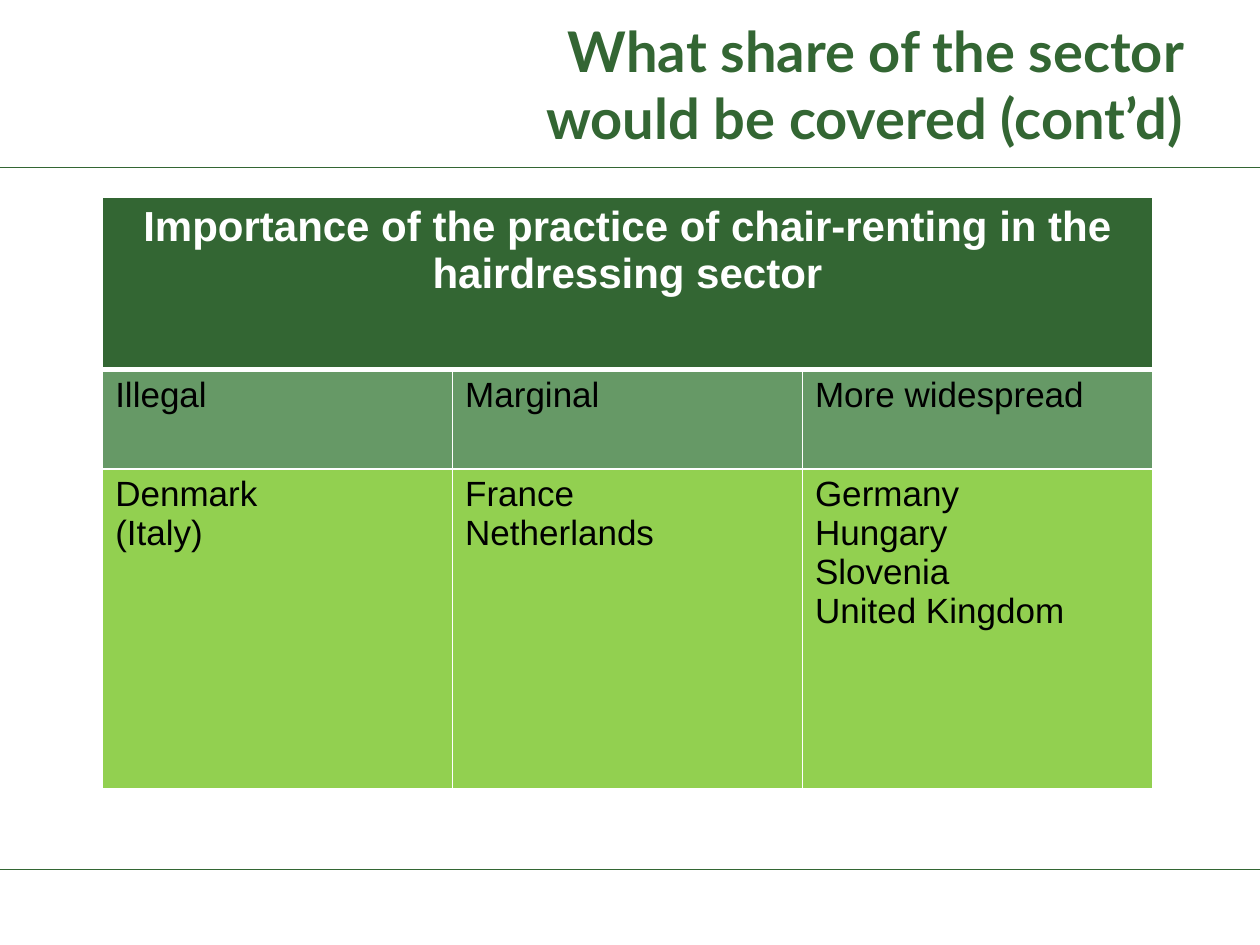
from lxml import etree
from pptx import Presentation
from pptx.dml.color import RGBColor
from pptx.enum.shapes import MSO_CONNECTOR
from pptx.enum.text import MSO_ANCHOR, MSO_AUTO_SIZE, PP_ALIGN
from pptx.oxml.ns import qn
from pptx.util import Cm, Pt

LINE = MSO_CONNECTOR.STRAIGHT
MIDDLE = MSO_ANCHOR.MIDDLE
FIXED = MSO_AUTO_SIZE.NONE
LEFT, CENTER, RIGHT = PP_ALIGN.LEFT, PP_ALIGN.CENTER, PP_ALIGN.RIGHT

COLORS = {
    "dark": "336633",
    "mid": "669966",
    "lime": "92D050",
    "white": "FFFFFF",
    "black": "000000",
}
WIDTH, HEIGHT = 25.4, 19.05


class Deck:
    def __init__(self):
        self.prs = Presentation()
        self.prs.slide_width, self.prs.slide_height = Cm(WIDTH), Cm(HEIGHT)
        self.slide = self.prs.slides.add_slide(self.prs.slide_layouts[5])

    def color(self, name):
        return RGBColor.from_string(COLORS[name])

    def style(self, frame, font, size, color, bold, align):
        for par in frame.paragraphs:
            par.alignment = align
            for run in par.runs:
                run.font.name = font
                run.font.size = Pt(size)
                run.font.bold = bold
                run.font.color.rgb = self.color(color)

    def title(self, text, left, top, width, height):
        box = self.slide.shapes.title
        box.left, box.top = Cm(left), Cm(top)
        box.width, box.height = Cm(width), Cm(height)
        frame = box.text_frame
        frame.text = text
        frame.word_wrap = True
        frame.auto_size = FIXED
        frame.vertical_anchor = MIDDLE
        self.style(frame, "Lato", 32, "dark", True, RIGHT)

    def rule(self, top):
        line = self.slide.shapes.add_connector(
            LINE, Cm(0), Cm(top), Cm(WIDTH), Cm(top))
        line.line.color.rgb = self.color("dark")
        line.line.width = Pt(0.75)
        etree.SubElement(line._element.spPr, qn("a:effectLst"))

    def border(self, cell, top, bottom):
        props = cell._tc.get_or_add_tcPr()
        for side, width in (("L", 1), ("R", 1), ("T", top), ("B", bottom)):
            edge = etree.SubElement(props, qn(f"a:ln{side}"), w=str(Pt(width)))
            fill = etree.SubElement(edge, qn("a:solidFill"))
            etree.SubElement(fill, qn("a:srgbClr"), val=COLORS["white"])

    def table(self, head, rows, left, top, width, heights):
        cols = len(rows[0])
        shape = self.slide.shapes.add_table(
            len(heights), cols, Cm(left), Cm(top), Cm(width), Cm(sum(heights)))
        table = shape.table
        table.horz_banding = False
        for row, height in zip(table.rows, heights):
            row.height = Cm(height)

        # Header across all columns
        first = table.cell(0, 0)
        first.merge(table.cell(0, cols - 1))
        first.text_frame.text = head
        self.style(first.text_frame, "Arial", 24, "white", True, CENTER)

        # Body text
        for r, row in enumerate(rows, 1):
            for c, text in enumerate(row):
                frame = table.cell(r, c).text_frame
                frame.text = text
                self.style(frame, "Arial", 20, "black", False, LEFT)

        # Borders, then fills; the header is set off by a thick edge
        for r, fill in enumerate(("dark", "mid", "lime")):
            for c in range(cols):
                cell = table.cell(r, c)
                self.border(cell, 3 if r == 1 else 1, 3 if r == 0 else 1)
                cell.fill.solid()
                cell.fill.fore_color.rgb = self.color(fill)


def main():
    deck = Deck()

    # Frame lines and title
    deck.rule(3.38)
    deck.rule(17.53)
    deck.title("What share of the sector would be covered (cont’d)",
               8.74, 0.43, 15.37, 2.51)

    # Table of countries
    deck.table(
        "Importance of the practice of chair-renting in the hairdressing sector",
        [
            ["Illegal", "Marginal", "More widespread"],
            ["Denmark\n(Italy)", "France\nNetherlands",
             "Germany\nHungary\nSlovenia\nUnited Kingdom"],
        ],
        2.07, 3.97, 21.16, (3.48, 2, 6.45))

    deck.prs.save("out.pptx")


if __name__ == "__main__":
    main()
